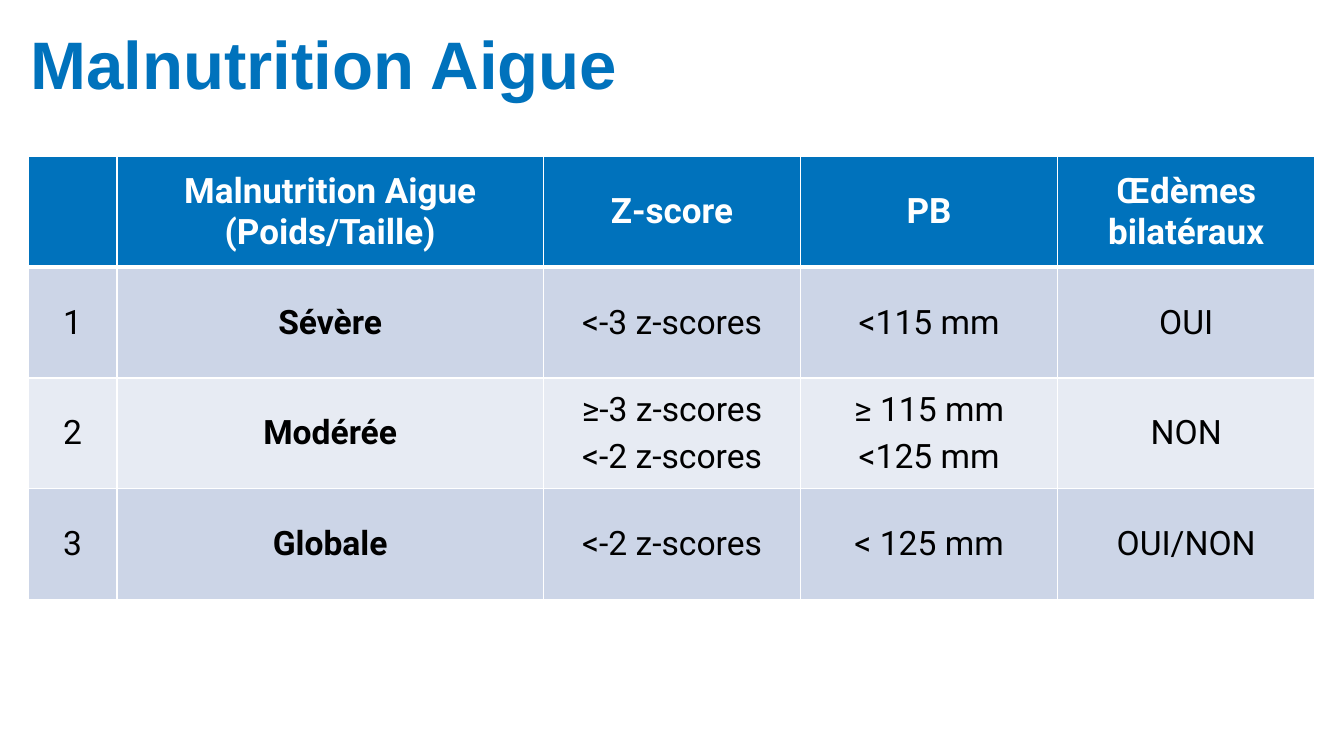
"""Build the slide that classifies acute malnutrition."""
from lxml import etree
from pptx import Presentation, util as u
from pptx.dml.color import RGBColor
from pptx.enum import text
from pptx.oxml.ns import qn

COLORS = {
    "blue": "0072BC",
    "white": "FFFFFF",
    "black": "000000",
    "band_dark": "CCD5E7",
    "band_light": "E7EBF3",
}
COLUMN_WIDTHS = [0.88, 4.23, 2.55, 2.55, 2.55]
ROW_HEIGHT = 1.1
ROWS = [
    ["", "Malnutrition Aigue\n(Poids/Taille)", "Z-score", "PB", "Œdèmes bilatéraux"],
    ["1", "Sévère", "<-3 z-scores", "<115 mm", "OUI"],
    ["2", "Modérée", "≥-3 z-scores\n<-2 z-scores", "≥ 115 mm\n<125 mm", "NON"],
    ["3", "Globale", "<-2 z-scores", "< 125 mm", "OUI/NON"],
]


def write(frame, content, *, font, size, color, bold=False, align=None, gap=0, spacing=None):
    for index, line in enumerate(content.split("\n")):
        paragraph = frame.paragraphs[0] if index == 0 else frame.add_paragraph()
        paragraph.alignment = align
        paragraph.line_spacing = spacing
        if index and gap:
            paragraph.space_before = u.Pt(gap)
        run = paragraph.add_run()
        run.text = line
        run.font.name = font
        run.font.size = u.Pt(size)
        run.font.bold = bold
        run.font.color.rgb = RGBColor.from_string(COLORS[color])


class SlideBuilder:
    def __init__(self, slide):
        self.slide = slide
        self.title_font = "Arial"
        self.table_font = "Roboto"

    def title(self, content, left, top, width, height):
        box = self.slide.shapes.add_textbox(
            u.Inches(left), u.Inches(top), u.Inches(width), u.Inches(height))
        frame = box.text_frame
        frame.word_wrap = True
        frame.vertical_anchor = text.MSO_ANCHOR.BOTTOM
        frame.margin_left = frame.margin_right = frame.margin_top = frame.margin_bottom = 0
        write(frame, content, font=self.title_font, size=48, color="blue", bold=True,
              align=text.PP_ALIGN.LEFT, spacing=0.9)

    def borders(self, cell, widths):
        properties = cell._tc.get_or_add_tcPr()
        for side, width in widths.items():
            line = etree.SubElement(properties, qn(f"a:ln{side}"), w=str(u.Pt(width)))
            fill = etree.SubElement(line, qn("a:solidFill"))
            etree.SubElement(fill, qn("a:srgbClr"), val=COLORS["white"])

    def cell(self, cell, content, row, column):
        header = row == 0
        self.borders(cell, {"L": 1, "R": 1, "T": 3 if row == 1 else 1, "B": 3 if header else 1})
        band = "blue" if header else "band_dark" if row % 2 else "band_light"
        cell.fill.solid()
        cell.fill.fore_color.rgb = RGBColor.from_string(COLORS[band])
        cell.vertical_anchor = text.MSO_ANCHOR.MIDDLE
        cell.margin_left = cell.margin_right = u.Inches(0.1)
        cell.margin_top = cell.margin_bottom = u.Inches(0.04)
        if content:
            write(cell.text_frame, content, font=self.table_font, size=25 if header else 24,
                  color="white" if header else "black", bold=header or column == 1,
                  align=text.PP_ALIGN.CENTER, gap=0 if header else 4.8)

    def table(self, rows, left, top):
        table = self.slide.shapes.add_table(
            len(rows), len(COLUMN_WIDTHS), u.Inches(left), u.Inches(top),
            u.Inches(sum(COLUMN_WIDTHS)), u.Inches(ROW_HEIGHT * len(rows))).table
        for column, width in zip(table.columns, COLUMN_WIDTHS):
            column.width = u.Inches(width)
        for row, contents in enumerate(rows):
            table.rows[row].height = u.Inches(ROW_HEIGHT)
            for column, content in enumerate(contents):
                self.cell(table.cell(row, column), content, row, column)


def main():
    presentation = Presentation()
    presentation.slide_width = u.Inches(13.33)
    presentation.slide_height = u.Inches(7.5)
    slide = presentation.slides.add_slide(presentation.slide_layouts[6])
    builder = SlideBuilder(slide)
    builder.title("Malnutrition Aigue", 0.3, 0.13, 12.77, 0.9)
    builder.table(ROWS, 0.28, 1.55)
    presentation.save("out.pptx")


if __name__ == "__main__":
    main()
